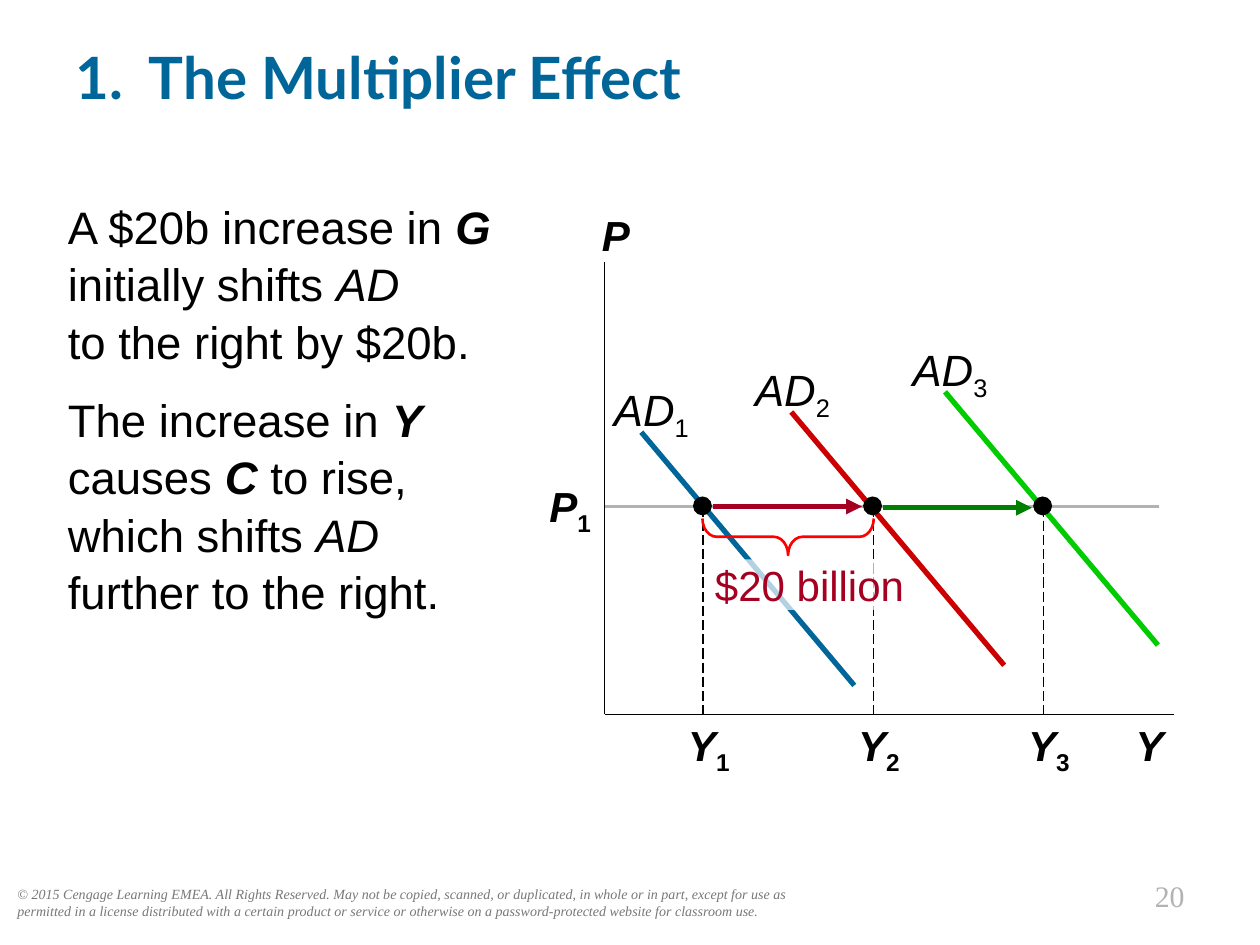
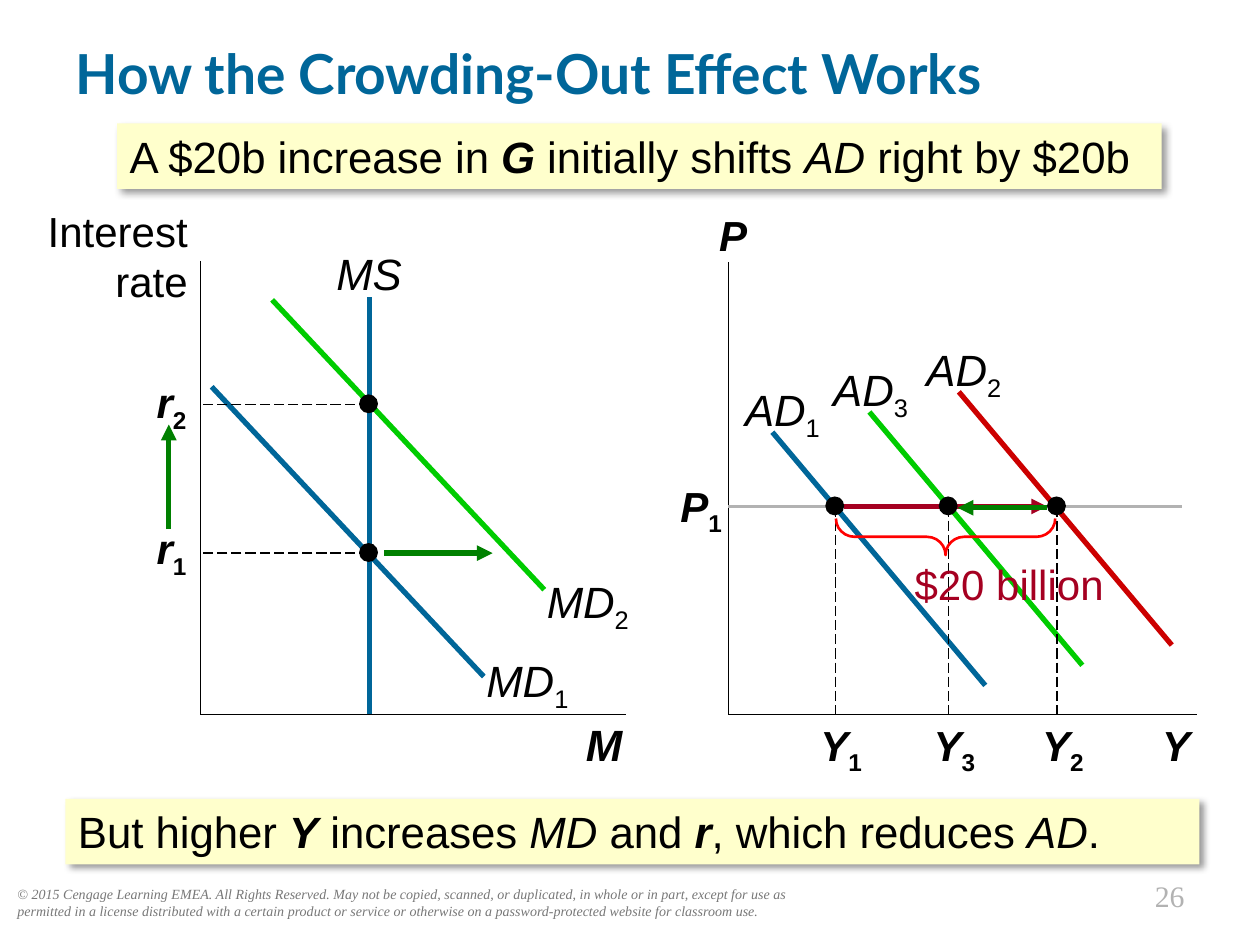
from dataclasses import dataclass

from lxml import etree
from pptx import Presentation
from pptx.dml.color import RGBColor
from pptx.enum.dml import MSO_LINE
from pptx.enum.shapes import MSO_CONNECTOR, MSO_SHAPE
from pptx.enum.text import MSO_ANCHOR, MSO_AUTO_SIZE, PP_ALIGN
from pptx.oxml.ns import qn
from pptx.util import Emu, Pt

PX = 9144
LEFT, MID, RIGHT = PP_ALIGN.LEFT, PP_ALIGN.CENTER, PP_ALIGN.RIGHT
TOP, HALF = MSO_ANCHOR.TOP, MSO_ANCHOR.MIDDLE
NO_FIT = MSO_AUTO_SIZE.NONE
DASH = MSO_LINE.LONG_DASH
WIRE = MSO_CONNECTOR.STRAIGHT
RECT, OVAL, BRACE = MSO_SHAPE.RECTANGLE, MSO_SHAPE.OVAL, MSO_SHAPE.LEFT_BRACE
SIDES = ("margin_left", "margin_top", "margin_right", "margin_bottom")
MARKS = {
    "*": {"bold": True, "italic": True},
    "_": {"italic": True},
    "~": {"base": -25000},
    "=": {"bold": True, "base": -25000},
}
LEGAL = (
    "© 2015 Cengage Learning EMEA. All Rights Reserved. May not be copied, "
    "scanned, or duplicated, in whole or in part, except for use as permitted "
    "in a license distributed with a certain product or service or otherwise "
    "on a password-protected website for classroom use."
)


@dataclass(frozen=True)
class Theme:
    """Colours, faces, type sizes and line widths of the deck."""

    ink: str = "000000"
    white: str = "FFFFFF"
    blue: str = "006699"
    red: str = "CC0000"
    lime: str = "00CC00"
    green: str = "008000"
    wine: str = "A50021"
    alert: str = "FF0000"
    gray: str = "B2B2B2"
    dim: str = "777777"
    cream: str = "FFFFCC"
    sans: str = "Arial"
    serif: str = "Times New Roman"
    head: str = "Lato"
    legal: float = 8
    page: float = 17
    axis: float = 24
    curve: float = 25
    body: float = 26
    thin: float = 0.75
    price: float = 2.25
    thick: float = 3


T = Theme()
HUES = {"1": T.blue, "2": T.red, "3": T.lime}


def px(*vals):
    """Turn px lengths into EMU."""
    return [Emu(val * PX) for val in vals]


def put(item, vals):
    """Set attributes of an item from a dict."""
    for name, val in vals.items():
        setattr(item, name, val)


def sub(node, tag, **vals):
    """Append a drawing element with attributes."""
    kid = etree.SubElement(node, qn("a:" + tag))
    for name, val in vals.items():
        kid.set(name, str(val))
    return kid


def write(par, text, size, color=T.ink, face=T.sans, **form):
    """Fill a paragraph with runs; | parts them and / breaks the line."""
    for part in text.split("|"):
        if part == "/":
            par.add_line_break()
            continue
        look = {"bold": False, "italic": False, **form, **MARKS.get(part[0], {})}
        base = look.pop("base", 0)
        run = par.add_run()
        run.text = part[1:] if part[0] in MARKS else part
        put(run.font, {"size": Pt(size), "name": face, **look})
        run.font.color.rgb = RGBColor.from_string(color)
        if base:
            run._r.get_or_add_rPr().set("baseline", str(base))


def frame(shape, inset=True, anchor=TOP):
    """Prepare the text frame of a shape and return it."""
    area = shape.text_frame
    put(area, {"word_wrap": True, "auto_size": NO_FIT, "vertical_anchor": anchor})
    if not inset:
        put(area, dict.fromkeys(SIDES, 0))
    return area


def label(slide, text, box, size=T.axis, align=MID, inset=False, **form):
    """Add a text box with one paragraph."""
    shape = slide.shapes.add_textbox(*px(*box))
    par = frame(shape, inset).paragraphs[0]
    par.alignment = align
    write(par, text, size, **form)
    return shape


def solid(shape, color):
    """Fill a shape with one colour, without line or shadow."""
    shape.fill.solid()
    shape.fill.fore_color.rgb = RGBColor.from_string(color)
    shape.line.fill.background()
    shape.shadow.inherit = False


def line(slide, ends, color=T.ink, width=T.thin, dash=None, arrow=False):
    """Add a straight line, dashed or with an arrowhead at its end."""
    wire = slide.shapes.add_connector(WIRE, *px(*ends))
    wire.line.color.rgb = RGBColor.from_string(color)
    put(wire.line, {"width": Pt(width), "dash_style": dash})
    if arrow:
        sub(wire.line._get_or_add_ln(), "tailEnd", type="triangle")
    sub(wire._element.spPr, "effectLst")


def dot(slide, x, y):
    """Add a black point centred at x, y."""
    solid(slide.shapes.add_shape(OVAL, *px(x - 8, y - 8, 15, 15)), T.ink)


def axes(slide, left, top, right):
    """Add the two axes of a graph."""
    line(slide, (left, top, left, 567))
    line(slide, (left, 567, right, 567))


def brace(slide, mid, span, bend):
    """Add a flat brace below the price line."""
    box = px(mid - 15, 426 - span // 2, 29, span)
    shape = slide.shapes.add_shape(BRACE, *box)
    shape.rotation = 270
    shape.adjustments[0] = bend
    shape.fill.background()
    shape.shadow.inherit = False
    shape.line.color.rgb = RGBColor.from_string(T.alert)
    shape.line.width = Pt(1.5)


def banner(slide, text, box):
    """Add a cream text band with a soft shadow."""
    shape = slide.shapes.add_shape(RECT, *px(*box))
    solid(shape, T.cream)
    glow = shape._element.spPr.find(qn("a:effectLst"))
    cast = sub(glow, "outerShdw", blurRad=50800, dist=38100, dir=2700000,
               algn="tl", rotWithShape=0)
    sub(sub(cast, "srgbClr", val=T.ink), "alpha", val=40000)
    par = frame(shape).paragraphs[0]
    par.alignment = LEFT
    write(par, text, T.curve)


def market(slide, left, right, end, tags, order, starts, spots, moves):
    """Draw the price and output graph with its three demand curves."""
    axes(slide, left, 208, right)
    for text, box, align in zip(("*Y", "*P", "*P|=1"), tags, (MID, RIGHT, RIGHT)):
        label(slide, text, box, align=align)
    for step, (name, x, back) in enumerate(zip(order, starts, (24, 31, 28))):
        y = 343 - 16 * step
        line(slide, (x, y, x + 169, y + 201), HUES[name], T.thick)
        label(slide, "_AD|~" + name, (x - back, y - 39, 64, 42), T.curve)
    line(slide, (left, 402, end, 402), T.gray, T.price)
    for x, goal, y, color in moves:
        line(slide, (x, y, goal, y), color, T.thick, arrow=True)
    for name, x in zip(order, spots):
        line(slide, (x, 402, x, 567), dash=DASH)
        dot(slide, x, 402)
        label(slide, "*Y|=" + name, (x - 21, 571, 42, 40), align=RIGHT)


def money(slide):
    """Draw the interest rate and money graph."""
    label(slide, "*M", (455, 570, 49, 42), T.curve)
    label(slide, "Interest rate", (22, 163, 127, 80), align=RIGHT)
    axes(slide, 159, 207, 497)
    line(slide, (293, 567, 293, 236), T.blue, T.thick)
    label(slide, "_MS", (261, 196, 64, 42), T.curve)
    for name, x, y, color in (("2", 216, 238, T.lime), ("1", 168, 307, T.blue)):
        line(slide, (x, y, x + 216, y + 230), color, T.thick)
        label(slide, "_MD|~" + name, (x + 211, y + 218 - 6 * (name == "1"), 79, 42),
              T.curve)
    for name, y, top in (("1", 439, 415), ("2", 321, 299)):
        label(slide, "*r|=" + name, (116, top, 32, 40), align=RIGHT)
        line(slide, (293, y, 159, y), dash=DASH)
        dot(slide, 293, y)
    for ends in ((305, 439, 391, 439), (134, 420, 134, 337)):
        line(slide, ends, T.green, T.thick, arrow=True)


def start(deck, text, top, size, page):
    """Add a slide with its title, legal line and page number."""
    slide = deck.slides.add_slide(deck.slide_layouts[5])
    label(slide, LEGAL, (4, 698, 643, 37), T.legal, LEFT, True,
          color=T.dim, face=T.serif, italic=True)
    label(slide, page, (825, 692, 125, 38), T.page, RIGHT, True,
          color=T.gray, face=T.serif)
    title = slide.shapes.title
    put(title, dict(zip(("left", "top", "width", "height"), px(50, top, 900, 71))))
    par = frame(title, anchor=HALF).paragraphs[0]
    par.alignment = LEFT
    if "\t" in text:
        stops = sub(par._p.get_or_add_pPr(), "tabLst")
        sub(stops, "tab", pos=58 * PX, algn="l")
    write(par, text, size, T.blue, T.head, bold=True)
    return slide


def story(slide, texts):
    """Add the running text beside the graph."""
    area = frame(slide.shapes.add_textbox(*px(44, 151, 369, 519)))
    for step, text in enumerate(texts):
        par = area.add_paragraph() if step else area.paragraphs[0]
        put(par, {"line_spacing": 1.05, "space_before": Pt(12 if step else 0)})
        write(par, text, T.body)


def effect(deck):
    """Build the multiplier slide."""
    slide = start(deck, "1.\tThe Multiplier Effect", 25, 33.3, "20")
    story(slide, (
        "A $20b increase in |*G| initially shifts |_AD |/|to the right by $20b.",
        "The increase in |*Y| causes |*C| to rise, which shifts |_AD"
        "| further to the right.",
    ))
    market(slide, 480, 932, 920,
           ((885, 571, 55, 40), (447, 166, 53, 40), (427, 381, 42, 40)),
           "123", (509, 628, 750), (558, 693, 828),
           ((566, 684, 402, T.wine), (701, 819, 403, T.green)))
    brace(slide, 626, 136, 0.39)
    sum_box = label(slide, "$20 billion", (562, 444, 161, 40), color=T.wine)
    sum_box.fill.solid()
    sum_box.fill.fore_color.rgb = RGBColor.from_string(T.white)
    tint = sum_box._element.spPr.find(qn("a:solidFill"))[0]
    sub(tint, "alpha", val=70000)


def crowd(deck):
    """Build the crowding-out slide."""
    slide = start(deck, "How the Crowding-Out Effect Works", 22, 31.5, "26")
    money(slide)
    banner(slide, "A $20b increase in |*G| initially shifts |_AD| right by $20b",
           (93, 98, 829, 52))
    banner(slide, "But higher |*Y| increases |_MD| and |*r|, which reduces |_AD|.",
           (52, 634, 900, 52))
    market(slide, 578, 950, 938,
           ((911, 571, 45, 40), (551, 166, 42, 40), (531, 381, 42, 40)),
           "132", (613, 690, 761), (663, 753, 839),
           ((670, 831, 402, T.wine), (831, 760, 403, T.green)))
    brace(slide, 751, 174, 0.51)
    label(slide, "$20 billion", (716, 438, 175, 50), align=LEFT, inset=True,
          color=T.wine)


def main():
    """Build and save the deck."""
    deck = Presentation()
    deck.slide_width, deck.slide_height = px(1000, 750)
    effect(deck)
    crowd(deck)
    deck.save("out.pptx")


if __name__ == "__main__":
    main()
